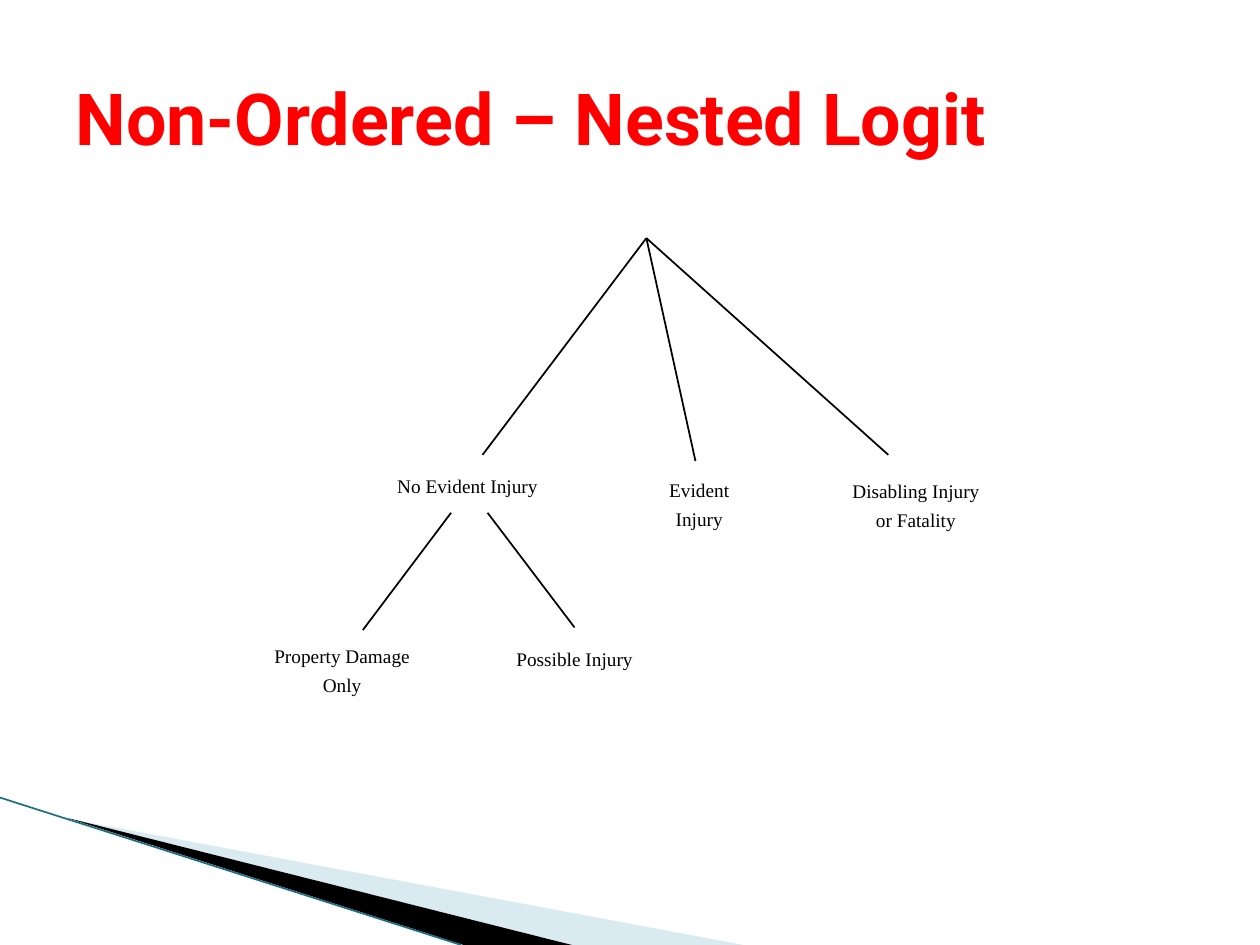
import pptx
import pptx.util
import pptx.dml.color
import pptx.enum.shapes
import pptx.enum.text
import pptx.oxml
import pptx.oxml.ns
from lxml import etree

Inches, Pt = pptx.util.Inches, pptx.util.Pt

# Content: each level has its branches (from, to) and its outcomes (text, box)
TITLE = "Non-Ordered – Nested Logit"
ROOT = (5.13, 1.89)
LEVELS = [
    {
        "branches": [(ROOT, (3.83, 3.61)), (ROOT, (5.52, 3.66)), (ROOT, (7.05, 3.61))],
        "outcomes": [
            ("No Evident Injury", (2.77, 3.67, 1.88, 0.62)),
            ("Evident Injury", (5.02, 3.7, 1.06, 1.01)),
            ("Disabling Injury or Fatality", (6.62, 3.71, 1.3, 1.25)),
        ],
    },
    {
        "branches": [((3.58, 4.07), (2.88, 5)), ((3.87, 4.07), (4.56, 4.98))],
        "outcomes": [
            ("Property Damage Only", (1.94, 5.02, 1.55, 0.95)),
            ("Possible Injury", (3.92, 5.04, 1.28, 1.03)),
        ],
    },
]
# Corner wedges: points, colour, opacity in percent
WEDGES = [
    ([(0.55, 6.5), (5.9, 7.5), (4.54, 7.5)], "A0CBDC", 40),
    ([(0.53, 6.49), (4.54, 7.5), (3.68, 7.5)], "000000", 100),
]
CORNER_EDGE = ((0, 6.33), (3.66, 7.5))


def rgb(colour):
    return pptx.dml.color.RGBColor.from_string(colour)


def paint(shape, colour):
    shape.shadow.inherit = False
    shape.fill.solid()
    shape.fill.fore_color.rgb = rgb(colour)
    shape.line.fill.background()


def style(paragraph, font_name, size, colour, bold=False):
    for run in paragraph.runs:
        run.font.name = font_name
        run.font.size = Pt(size)
        run.font.bold = bold
        run.font.color.rgb = rgb(colour)


def add_line(slide, start, end, colour, width):
    line = slide.shapes.add_connector(
        pptx.enum.shapes.MSO_CONNECTOR.STRAIGHT, *map(Inches, start + end))
    line.line.color.rgb = rgb(colour)
    line.line.width = Pt(width)
    etree.SubElement(line._element.spPr, pptx.oxml.ns.qn("a:effectLst"))


def add_wedge(slide, points, colour, opacity):
    corners = [(Inches(x), Inches(y)) for x, y in points]
    builder = slide.shapes.build_freeform(*corners[0])
    builder.add_line_segments(corners[1:], close=True)
    wedge = builder.convert_to_shape()
    paint(wedge, colour)
    if opacity < 100:
        fill_colour = wedge._element.spPr.find(".//" + pptx.oxml.ns.qn("a:srgbClr"))
        etree.SubElement(fill_colour, pptx.oxml.ns.qn("a:alpha"), val=str(opacity * 1000))


def add_outcome(slide, text, box):
    outcome = slide.shapes.add_shape(
        pptx.enum.shapes.MSO_SHAPE.RECTANGLE, *map(Inches, box))
    paint(outcome, "FFFFFF")
    frame = outcome.text_frame
    frame.word_wrap = True
    frame.vertical_anchor = pptx.enum.text.MSO_ANCHOR.TOP
    frame.text = text
    label = frame.paragraphs[0]
    label.alignment = pptx.enum.text.PP_ALIGN.CENTER
    label.line_spacing = 1.25
    style(label, "Times New Roman", 11, "000000")


def main():
    deck = pptx.Presentation()
    deck.slide_width, deck.slide_height = Inches(10), Inches(7.5)
    slide = deck.slides.add_slide(deck.slide_layouts.get_by_name("Title Only"))

    # Corner decoration
    for wedge in WEDGES:
        add_wedge(slide, *wedge)
    add_line(slide, *CORNER_EDGE, "1B6F85", 0.95)

    # Title
    title = slide.shapes.title
    title.left, title.top, title.width, title.height = map(Inches, (0.5, 0.3, 9, 1.25))
    title.text_frame.text = TITLE
    title.text_frame.auto_size = pptx.enum.text.MSO_AUTO_SIZE.NONE
    title.text_frame.vertical_anchor = pptx.enum.text.MSO_ANCHOR.MIDDLE
    heading = title.text_frame.paragraphs[0]
    heading.alignment = pptx.enum.text.PP_ALIGN.LEFT
    style(heading, "Roboto", 41, "FF0000", bold=True)

    # Tree, level by level
    for level in LEVELS:
        for start, end in level["branches"]:
            add_line(slide, start, end, "000000", 1)
        for text, box in level["outcomes"]:
            add_outcome(slide, text, box)

    deck.save("out.pptx")


if __name__ == "__main__":
    main()
